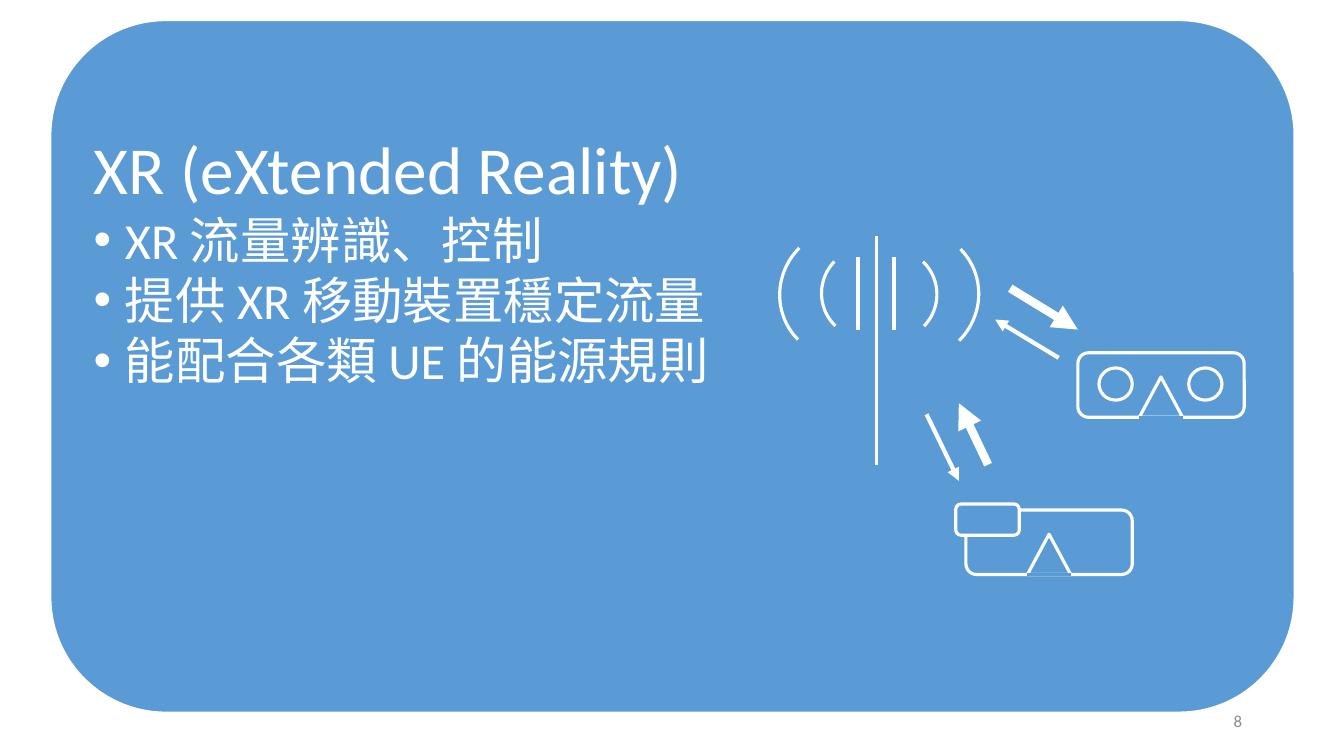
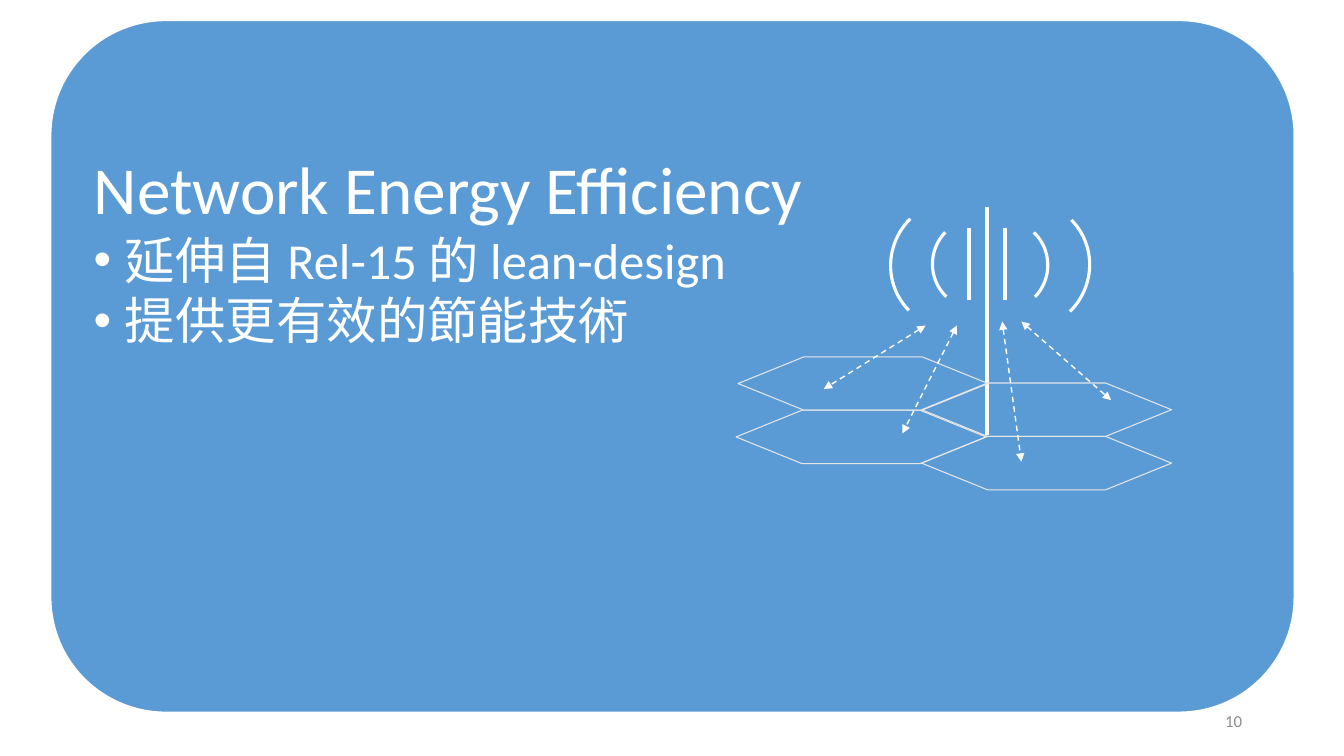
"""Build two slides on XR and network energy efficiency."""
import dataclasses
import typing

import lxml.etree
import pptx
import pptx.dml.color
import pptx.enum.dml
import pptx.enum.shapes
import pptx.enum.text
import pptx.oxml.ns
import pptx.util

EMU_PER_PX = 9144
FONT = "Calibri"
BLUE, WHITE, PALE, GREY = "5B9BD5", "FFFFFF", "E7E6E6", "8C8C8C"
LEFT, TITLE_HEIGHT = 93, 81
BULLET_INDENT = 31
SHAPE = pptx.enum.shapes.MSO_SHAPE
ALIGN = pptx.enum.text.PP_ALIGN
ANCHOR = pptx.enum.text.MSO_ANCHOR


@dataclasses.dataclass(frozen=True)
class Topic:
    title: str
    bullets: str
    top: int
    number: int


@dataclasses.dataclass(frozen=True)
class Arc:
    x: int
    y: int
    width: int
    height: int
    turn: float


@dataclasses.dataclass(frozen=True)
class Arrow:
    start: tuple[int, int]
    end: tuple[int, int]
    weight: float


XR = Topic("XR (eXtended Reality)",
           "XR 流量辨識、控制\n提供 XR 移動裝置穩定流量\n能配合各類 UE 的能源規則", 126, 8)
ENERGY = Topic("Network Energy Efficiency",
               "延伸自 Rel-15 的 lean-design\n提供更有效的節能技術", 146, 10)
WAVES = [
    Arc(-26, -6, 127, 130, 45.2),
    Arc(-30, 13, 90, 91, 43.7),
    Arc(-95, -8, 127, 130, 225.2),
    Arc(-54, 11, 90, 91, 223.7),
]
XR_TRAFFIC = [
    Arrow((1002, 286), (1069, 327), 6),
    Arrow((1050, 355), (987, 317), 3),
    Arrow((980, 461), (951, 400), 6),
    Arrow((919, 411), (951, 477), 3),
]
CELL_CORNERS = [(730, 407), (914, 380), (732, 354), (914, 433)]
CELL_LINKS = [
    Arrow((918, 323), (817, 386), 1),
    Arrow((949, 323), (895, 430), 1),
    Arrow((994, 319), (1013, 458), 1),
    Arrow((1013, 319), (1102, 397), 1),
]


def px(length: int) -> pptx.util.Emu:
    """Turn pixels into EMU."""
    return pptx.util.Emu(length * EMU_PER_PX)


def colour(code: str) -> pptx.dml.color.RGBColor:
    """Turn a hex string into a colour."""
    return pptx.dml.color.RGBColor.from_string(code)


def add_bullet(para: typing.Any) -> None:
    """Give a paragraph a hanging round bullet."""
    properties = para._p.get_or_add_pPr()
    properties.set("marL", str(px(BULLET_INDENT)))
    properties.set("indent", str(-px(BULLET_INDENT)))
    for tag, key, value in (("a:buFont", "typeface", "Arial"), ("a:buChar", "char", "•")):
        lxml.etree.SubElement(properties, pptx.oxml.ns.qn(tag)).set(key, value)


def write_text(box: typing.Any, text: str, *, size: int, ink: str = WHITE,
               align: ALIGN = ALIGN.LEFT, anchor: ANCHOR = ANCHOR.TOP,
               bulleted: bool = False) -> None:
    """Fill a box with one formatted paragraph per line of text."""
    frame = box.text_frame
    frame.word_wrap = True
    frame.auto_size = pptx.enum.text.MSO_AUTO_SIZE.NONE
    frame.vertical_anchor = anchor
    frame.margin_left = frame.margin_right = frame.margin_top = frame.margin_bottom = 0
    for index, line in enumerate(text.split("\n")):
        para = frame.add_paragraph() if index else frame.paragraphs[0]
        para.alignment = align
        para.line_spacing = 1.0
        if bulleted:
            add_bullet(para)
        span = para.add_run()
        span.text = line
        span.font.name = FONT
        span.font.size = pptx.util.Pt(size)
        span.font.color.rgb = colour(ink)


def add_figure(page: typing.Any, kind: SHAPE, x: int, y: int, width: int, height: int, *,
               fill: str | None = None, ink: str = WHITE, weight: float = 2.25) -> typing.Any:
    """Add an outlined preset shape."""
    figure = page.shapes.add_shape(kind, px(x), px(y), px(width), px(height))
    figure.shadow.inherit = False
    if fill:
        figure.fill.solid()
        figure.fill.fore_color.rgb = colour(fill)
    else:
        figure.fill.background()
    figure.line.color.rgb = colour(ink)
    figure.line.width = pptx.util.Pt(weight)
    return figure


def add_line(page: typing.Any, start: tuple[int, int], end: tuple[int, int], *,
             ink: str = WHITE, weight: float = 2.25, dashed: bool = False,
             heads: tuple[str, ...] = ()) -> None:
    """Add a straight line with optional dashes and arrowheads."""
    line = page.shapes.add_connector(pptx.enum.shapes.MSO_CONNECTOR.STRAIGHT,
                                     px(start[0]), px(start[1]), px(end[0]), px(end[1]))
    line.line.color.rgb = colour(ink)
    line.line.width = pptx.util.Pt(weight)
    if dashed:
        line.line.dash_style = pptx.enum.dml.MSO_LINE.DASH
    outline = line.line._get_or_add_ln()
    for head in heads:
        lxml.etree.SubElement(outline, pptx.oxml.ns.qn(head)).set("type", "triangle")
    lxml.etree.SubElement(line.element.spPr, pptx.oxml.ns.qn("a:effectLst"))


def add_page(deck: typing.Any, topic: Topic) -> typing.Any:
    """Add a slide with the blue panel, title, bullets and number."""
    page = deck.slides.add_slide(deck.slide_layouts.get_by_name("Title Only"))
    add_figure(page, SHAPE.ROUNDED_RECTANGLE, 50, 20, 1234, 687, fill=BLUE, weight=1.5)
    title = page.shapes.title
    title.element.getparent().append(title.element)
    title.left, title.top = px(LEFT), px(topic.top)
    title.width, title.height = px(800), px(TITLE_HEIGHT)
    write_text(title, topic.title, size=48)
    bullets = page.shapes.add_textbox(px(LEFT), px(topic.top + TITLE_HEIGHT), px(800), px(190))
    write_text(bullets, topic.bullets, size=36, bulleted=True)
    number = page.shapes.add_textbox(px(942), px(695), px(290), px(40))
    write_text(number, str(topic.number), size=12, ink=GREY,
               align=ALIGN.RIGHT, anchor=ANCHOR.MIDDLE)
    return page


def add_antenna(page: typing.Any, x: int, y: int) -> None:
    """Draw a mast with radio waves, its top at the given point."""
    add_line(page, (x, y), (x, y + 227))
    for wave in WAVES:
        arc = add_figure(page, SHAPE.ARC, x + wave.x, y + wave.y, wave.width, wave.height,
                         fill=BLUE)
        arc.rotation = wave.turn
    for side in (-18, 18):
        add_line(page, (x + side, y + 21), (x + side, y + 93), weight=3)


def add_headset(page: typing.Any, x: int, y: int) -> None:
    """Draw a headset front with an open nose notch."""
    add_figure(page, SHAPE.ROUNDED_RECTANGLE, x, y, 165, 64)
    add_figure(page, SHAPE.ISOSCELES_TRIANGLE, x + 61, y + 24, 43, 40, fill=BLUE)
    add_line(page, (x + 61, y + 64), (x + 104, y + 64), ink=BLUE)


def build_xr(deck: typing.Any) -> None:
    """Build the XR slide."""
    page = add_page(deck, XR)
    add_antenna(page, 869, 234)
    add_headset(page, 1069, 350)
    for eye_x in (1090, 1179):
        add_figure(page, SHAPE.OVAL, eye_x, 365, 33, 32)
    add_headset(page, 958, 506)
    add_figure(page, SHAPE.ROUNDED_RECTANGLE, 948, 500, 63, 31, fill=BLUE)
    for arrow in XR_TRAFFIC:
        add_line(page, arrow.start, arrow.end, weight=arrow.weight, heads=("a:tailEnd",))


def build_energy(deck: typing.Any) -> None:
    """Build the energy efficiency slide."""
    page = add_page(deck, ENERGY)
    add_antenna(page, 979, 205)
    for x, y in CELL_CORNERS:
        cell = add_figure(page, SHAPE.HEXAGON, x, y, 248, 53, ink=PALE, weight=0.75)
        cell.adjustments[0] = 1.235
    for link in CELL_LINKS:
        add_line(page, link.start, link.end, weight=link.weight, dashed=True,
                 heads=("a:headEnd", "a:tailEnd"))


def main() -> None:
    """Build and save the deck."""
    deck = pptx.Presentation()
    deck.slide_width, deck.slide_height = px(1333), px(750)
    build_xr(deck)
    build_energy(deck)
    deck.save("out.pptx")


if __name__ == "__main__":
    main()
